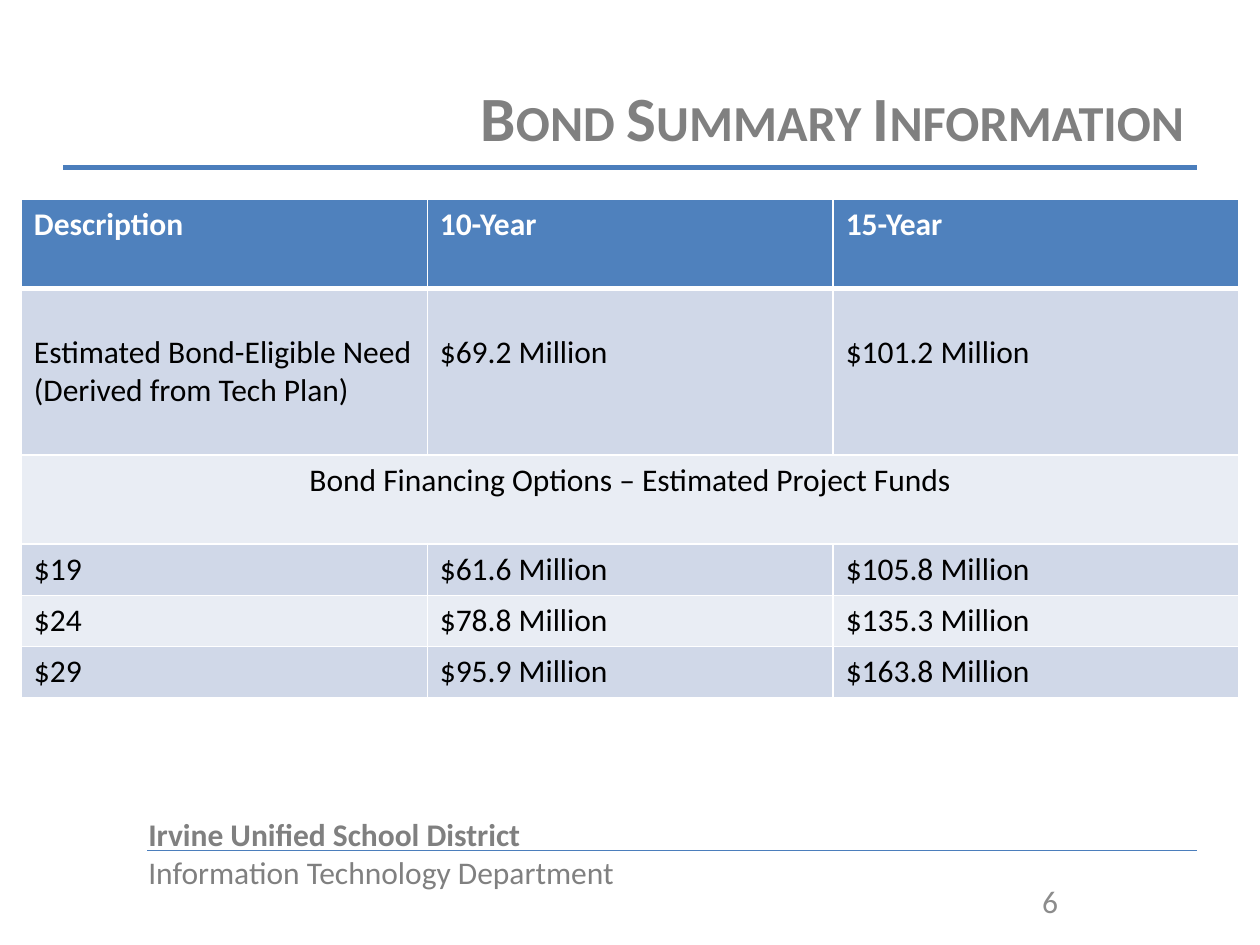
from lxml.etree import SubElement
from pptx import Presentation
from pptx.dml.color import RGBColor
from pptx.enum.shapes import MSO_CONNECTOR
from pptx.enum.text import MSO_ANCHOR, PP_ALIGN
from pptx.oxml.ns import qn
from pptx.util import Cm, Pt

GREY = RGBColor(0x80, 0x80, 0x80)
PALE = RGBColor(0x8C, 0x8C, 0x8C)
RULE = RGBColor(0x4B, 0x7E, 0xBC)
BLUE = RGBColor(0x4F, 0x81, 0xBD)
BAND = RGBColor(0xD0, 0xD8, 0xE8)
LIGHT = RGBColor(0xE9, 0xED, 0xF4)
WHITE = RGBColor(0xFF, 0xFF, 0xFF)
BLACK = RGBColor(0, 0, 0)

ROWS = [
    ("Description", "10-Year", "15-Year"),
    ("Estimated Bond-Eligible Need (Derived from Tech Plan)",
     "$69.2 Million", "$101.2 Million"),
    ("Bond Financing Options – Estimated Project Funds",),
    ("$19", "$61.6 Million", "$105.8 Million"),
    ("$24", "$78.8 Million", "$135.3 Million"),
    ("$29", "$95.9 Million", "$163.8 Million"),
]
HEIGHTS = [1.8, 3.35, 1.8, 1.03, 1.03, 1.03]


class Page:
    base = {"name": "Calibri", "size": Pt(18), "bold": False}

    def __init__(self, slide):
        self.slide = slide

    def label(self, para, text, color, align=PP_ALIGN.LEFT, **form):
        para.alignment = align
        run = para.add_run()
        run.text = text
        for key, val in {**self.base, **form}.items():
            setattr(run.font, key, val)
        run.font.color.rgb = color
        return run

    def title(self, text, *box):
        shape = self.slide.shapes.title
        for key, val in zip(("left", "top", "width", "height"), box):
            setattr(shape, key, Cm(val))
        frame = shape.text_frame
        frame.vertical_anchor = MSO_ANCHOR.MIDDLE
        run = self.label(frame.paragraphs[0], text, GREY, PP_ALIGN.RIGHT,
                         size=Pt(36), bold=True)
        run._r.get_or_add_rPr().set("cap", "small")

    def text(self, lines, box, color, align=PP_ALIGN.LEFT):
        frame = self.slide.shapes.add_textbox(*map(Cm, box)).text_frame
        frame.word_wrap = True
        for num, (line, bold) in enumerate(lines):
            para = frame.add_paragraph() if num else frame.paragraphs[0]
            self.label(para, line, color, align, bold=bold)

    def line(self, left, right, top, width):
        rule = self.slide.shapes.add_connector(
            MSO_CONNECTOR.STRAIGHT, Cm(left), Cm(top), Cm(right), Cm(top))
        rule.line.color.rgb = RULE
        rule.line.width = Pt(width)
        SubElement(rule._element.spPr, qn("a:effectLst"))

    def edge(self, cell, row):
        props = cell._tc.get_or_add_tcPr()
        thick = {"lnT": row == 1, "lnB": row == 0}
        for side in ("lnL", "lnR", "lnT", "lnB"):
            width = Pt(3 if thick.get(side) else 1)
            line = SubElement(props, qn(f"a:{side}"), w=str(width))
            fill = SubElement(line, qn("a:solidFill"))
            SubElement(fill, qn("a:srgbClr"), val=str(WHITE))

    def table(self, rows, heights, left, top, width):
        cols = len(rows[0])
        grid = self.slide.shapes.add_table(
            len(rows), cols, Cm(left), Cm(top), Cm(width),
            Cm(sum(heights))).table
        for num, row in enumerate(rows):
            grid.rows[num].height = Cm(heights[num])
            head, span = num == 0, len(row) == 1
            for col in range(cols):
                cell = grid.cell(num, col)
                self.edge(cell, num)
                cell.fill.solid()
                cell.fill.fore_color.rgb = (
                    BLUE if head else BAND if num % 2 else LIGHT)
                if col < len(row):
                    self.label(cell.text_frame.paragraphs[0], row[col],
                               WHITE if head else BLACK,
                               PP_ALIGN.CENTER if span else PP_ALIGN.LEFT,
                               bold=head)
                # The need row starts one line lower
                if num == 1:
                    cell.margin_top = Cm(0.9)
            if span:
                grid.cell(num, 0).merge(grid.cell(num, cols - 1))


def main():
    deck = Presentation()
    deck.slide_width, deck.slide_height = Cm(25.4), Cm(19.05)
    page = Page(deck.slides.add_slide(deck.slide_layouts[5]))

    # Footer and rules
    page.text([("Irvine Unified School District", True),
               ("Information Technology Department", False)],
              (2.74, 16.31, 21.16, 2.57), GREY)
    page.line(2.97, 24.13, 17.15, 0.75)
    page.line(1.27, 24.13, 3.38, 2.5)

    # Title
    page.title("Bond Summary Information", 1.27, 0.76, 22.86, 3.18)

    # Bond figures
    page.table(ROWS, HEIGHTS, 0.43, 4.02, 24.55)

    # Page number
    page.text([("6", False)], (18.21, 17.65, 5.92, 1.02), PALE,
              PP_ALIGN.CENTER)
    deck.save("out.pptx")


if __name__ == "__main__":
    main()
